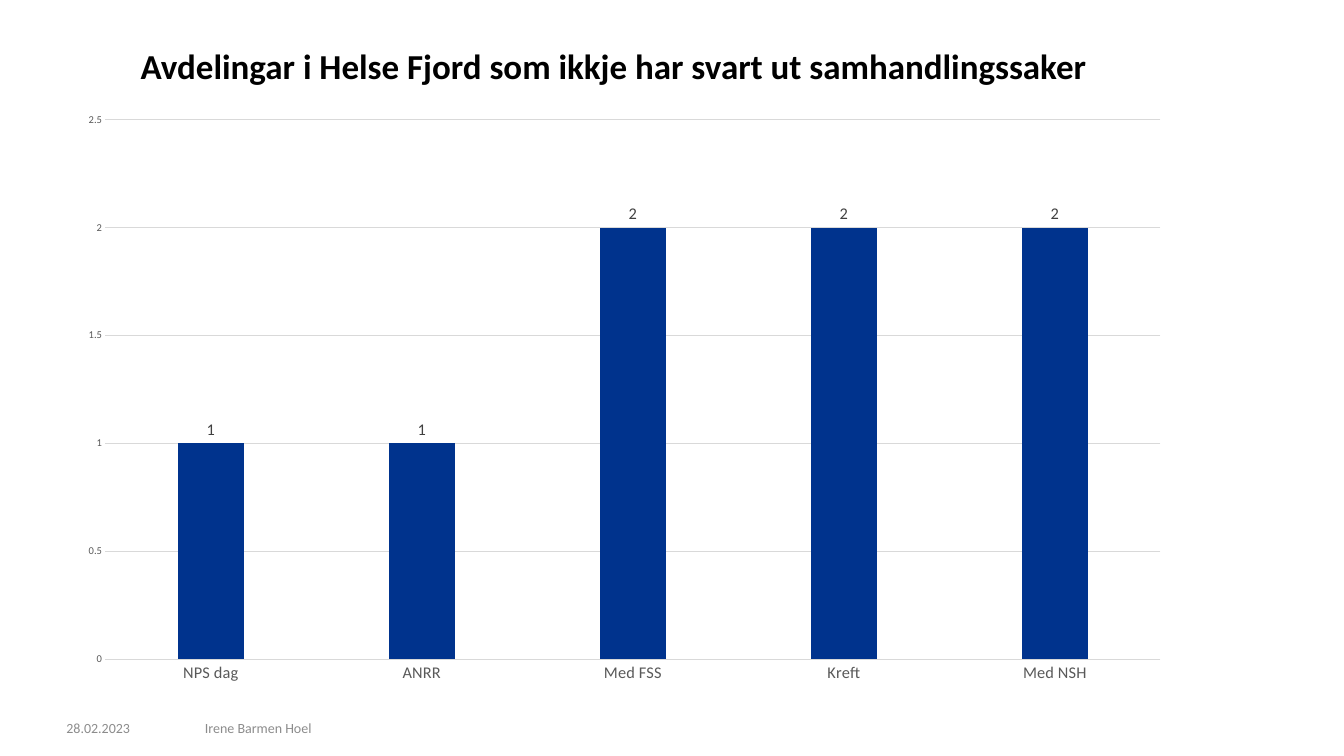
from dataclasses import dataclass

from lxml import etree
from pptx import Presentation
from pptx.chart import data as chart_data
from pptx.dml import color
from pptx.enum import chart as ce, text
from pptx.util import Pt


@dataclass(frozen=True)
class Theme:
    font: str = "Calibri"
    black: str = "000000"
    footer_grey: str = "8C8C8C"
    axis_grey: str = "595959"
    label_grey: str = "404040"
    rule_grey: str = "D9D9D9"
    bar_blue: str = "00338D"
    title_size: int = 30
    title_leading: int = 32
    label_size: int = 14
    footer_size: int = 12
    chart_size: int = 10
    value_size: int = 9
    rule_width: float = 0.75


THEME = Theme()
LEFT = 56.88

DEPARTMENTS = {"NPS dag": 1, "ANRR": 1, "Med FSS": 2, "Kreft": 2, "Med NSH": 2}


def set_values(target, values):
    for name, value in values.items():
        setattr(target, name, value)


def style_font(font, size, rgb, bold=False):
    set_values(font, {"name": THEME.font, "size": Pt(size), "bold": bold})
    font.color.rgb = color.RGBColor.from_string(rgb)


def style_line(line):
    line.color.rgb = color.RGBColor.from_string(THEME.rule_grey)
    line.width = Pt(THEME.rule_width)


def place(box, left, top, width, height):
    set_values(box, {"left": Pt(left), "top": Pt(top),
                     "width": Pt(width), "height": Pt(height)})


def fill_frame(box, words, anchor, size, rgb, bold=False):
    frame = box.text_frame
    set_values(frame, {"margin_left": 0, "margin_top": 0, "margin_right": 0,
                       "margin_bottom": 0, "word_wrap": True,
                       "auto_size": text.MSO_AUTO_SIZE.NONE,
                       "vertical_anchor": anchor})
    para = frame.paragraphs[0]
    span = para.add_run()
    span.text = words
    style_font(span.font, size, rgb, bold)
    return para


def add_title(page, words):
    title = page.shapes.title
    place(title, LEFT, 41.76, 938.88, 45.36)
    para = fill_frame(title, words, text.MSO_ANCHOR.TOP,
                      THEME.title_size, THEME.black, bold=True)
    set_values(para, {"alignment": text.PP_ALIGN.CENTER,
                      "line_spacing": Pt(THEME.title_leading),
                      "space_before": Pt(0)})


def add_footer(page, words, left, width):
    box = page.shapes.add_textbox(Pt(left), Pt(614.88), Pt(width), Pt(17.28))
    fill_frame(box, words, text.MSO_ANCHOR.MIDDLE,
               THEME.footer_size, THEME.footer_grey)


def style_axis(axis, size):
    set_values(axis, {"major_tick_mark": ce.XL_TICK_MARK.NONE,
                      "minor_tick_mark": ce.XL_TICK_MARK.NONE})
    style_font(axis.tick_labels.font, size, THEME.axis_grey)


def add_column_chart(page, values):
    data = chart_data.CategoryChartData()
    data.categories = list(values)
    data.add_series("Series 1", list(values.values()))
    chart = page.shapes.add_chart(ce.XL_CHART_TYPE.COLUMN_CLUSTERED, Pt(LEFT), Pt(87.12),
                                  Pt(956.88), Pt(508.32), data).chart
    set_values(chart, {"has_legend": False, "has_title": False})
    style_font(chart.font, THEME.chart_size, THEME.black)

    # Axes and gridlines
    style_axis(chart.category_axis, THEME.label_size)
    style_line(chart.category_axis.format.line)
    value_axis = chart.value_axis
    style_axis(value_axis, THEME.value_size)
    set_values(value_axis, {"minimum_scale": 0, "maximum_scale": 2.5,
                            "major_unit": 0.5, "has_major_gridlines": True})
    value_axis.format.line.fill.background()
    style_line(value_axis.major_gridlines.format.line)

    # Bars and their labels
    plot = chart.plots[0]
    set_values(plot, {"gap_width": 219, "overlap": -27, "vary_by_categories": False})
    bars = plot.series[0]
    bars.format.fill.solid()
    bars.format.fill.fore_color.rgb = color.RGBColor.from_string(THEME.bar_blue)
    labels = bars.data_labels
    set_values(labels, {"show_value": True,
                        "position": ce.XL_LABEL_POSITION.OUTSIDE_END})
    style_font(labels.font, THEME.label_size, THEME.label_grey)


def main():
    deck = Presentation()
    set_values(deck, {"slide_width": Pt(1152), "slide_height": Pt(648)})
    page = deck.slides.add_slide(deck.slide_layouts.get_by_name("Title Only"))

    add_footer(page, "28.02.2023", LEFT, 90.72)
    add_footer(page, "Irene Barmen Hoel", 175.68, 703.44)
    add_title(page, "Avdelingar i Helse Fjord som ikkje har svart ut samhandlingssaker")
    add_column_chart(page, DEPARTMENTS)

    deck.save("out.pptx")


if __name__ == "__main__":
    main()
